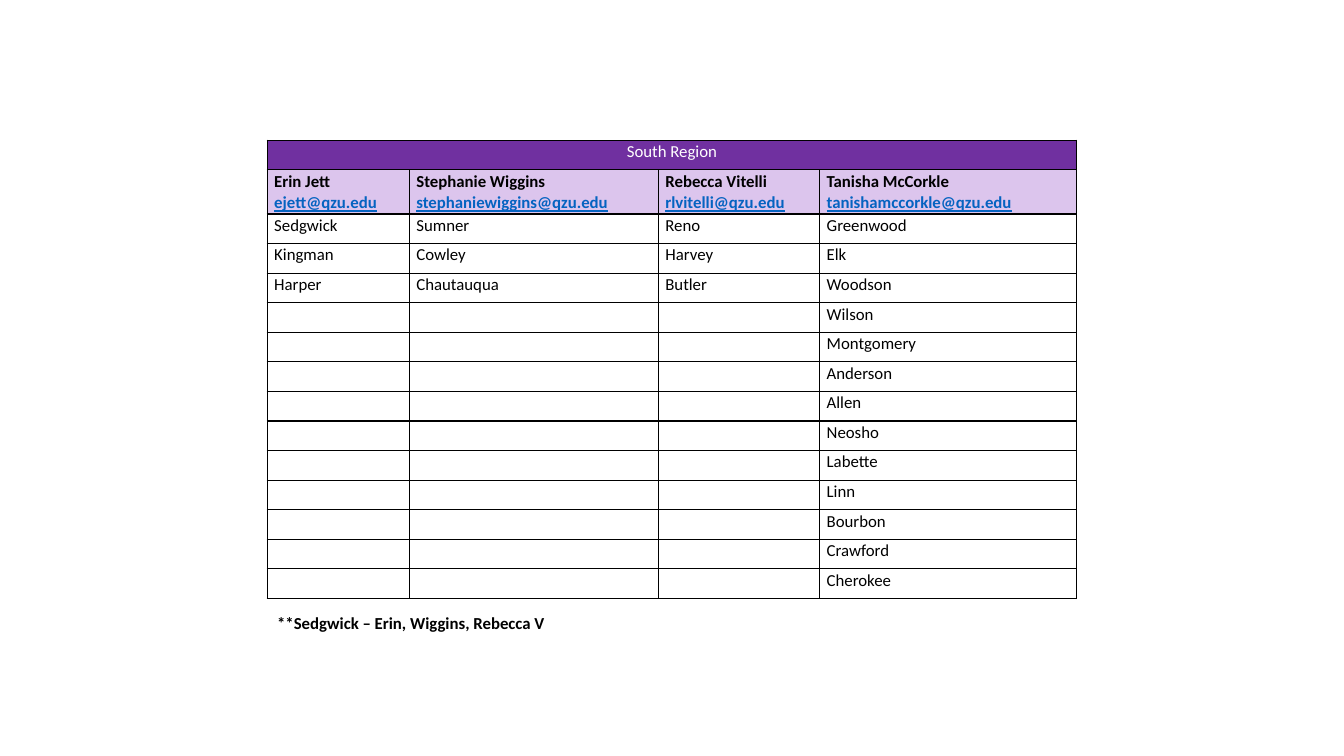
from itertools import zip_longest

from lxml import etree
from pptx import Presentation
from pptx.dml.color import RGBColor
from pptx.enum.text import MSO_ANCHOR, MSO_AUTO_SIZE, PP_ALIGN
from pptx.oxml.ns import qn
from pptx.util import Inches, Pt

CENTER, LEFT = PP_ALIGN.CENTER, PP_ALIGN.LEFT
MIDDLE = MSO_ANCHOR.MIDDLE
FIT_SHAPE = MSO_AUTO_SIZE.SHAPE_TO_FIT_TEXT

FONT, SIZE = "Calibri", 12
BLACK, WHITE, PURPLE, LILAC, LINK_BLUE = "000000", "FFFFFF", "7030A0", "DCC5ED", "0563C1"

REGION = "South Region"
AGENTS = [
    ("Erin Jett", "ejett@qzu.edu"),
    ("Stephanie Wiggins", "stephaniewiggins@qzu.edu"),
    ("Rebecca Vitelli", "rlvitelli@qzu.edu"),
    ("Tanisha McCorkle", "tanishamccorkle@qzu.edu"),
]
COUNTIES = [
    ["Sedgwick", "Kingman", "Harper"],
    ["Sumner", "Cowley", "Chautauqua"],
    ["Reno", "Harvey", "Butler"],
    ["Greenwood", "Elk", "Woodson", "Wilson", "Montgomery", "Anderson", "Allen",
     "Neosho", "Labette", "Linn", "Bourbon", "Crawford", "Cherokee"],
]
COLUMN_WIDTHS = [1.41, 2.47, 1.6, 2.55]
AGENT_ROW_HEIGHT = 0.44


def rgb(color):
    return RGBColor.from_string(color)


def add_run(paragraph, text, color=BLACK, bold=False, underline=False):
    run = paragraph.add_run()
    run.text = text
    font = run.font
    font.name, font.size = FONT, Pt(SIZE)
    font.bold, font.underline = bold, underline
    font.color.rgb = rgb(color)


def add_borders(cell):
    properties = cell._tc.get_or_add_tcPr()
    for side in ("lnL", "lnR", "lnT", "lnB"):
        line = etree.SubElement(properties, qn(f"a:{side}"), w=str(Pt(1)))
        fill = etree.SubElement(line, qn("a:solidFill"))
        etree.SubElement(fill, qn("a:srgbClr"), val=BLACK)


def format_cell(cell, fill=None):
    cell.margin_left = cell.margin_right = Inches(0.07)
    cell.margin_top = cell.margin_bottom = 0
    add_borders(cell)
    if fill:
        cell.fill.solid()
        cell.fill.fore_color.rgb = rgb(fill)
    else:
        cell.fill.background()


def fill_cell(cell, lines, align=LEFT):
    """Write one paragraph for each dict of add_run arguments."""
    frame = cell.text_frame
    for index, line in enumerate(lines):
        paragraph = frame.add_paragraph() if index else frame.paragraphs[0]
        paragraph.alignment = align
        paragraph.line_spacing = 1.07
        add_run(paragraph, **line)
    if not lines:
        # An empty cell needs the text size too, or its row grows
        etree.SubElement(frame.paragraphs[0]._p, qn("a:endParaRPr"), sz=str(SIZE * 100))


def add_region_table(slide, left, top, width, height):
    county_rows = list(zip_longest(*COUNTIES))
    row_count = len(county_rows) + 2
    table = slide.shapes.add_table(row_count, len(AGENTS), Inches(left), Inches(top),
                                   Inches(width), Inches(height)).table
    table.first_row = table.horz_banding = False
    for column, column_width in zip(table.columns, COLUMN_WIDTHS):
        column.width = Inches(column_width)
    for row in table.rows:
        row.height = Inches((height - AGENT_ROW_HEIGHT) / (row_count - 1))
    table.rows[1].height = Inches(AGENT_ROW_HEIGHT)

    row_fills = [PURPLE, LILAC] + [None] * len(county_rows)
    for row, fill in zip(table.rows, row_fills):
        for cell in row.cells:
            format_cell(cell, fill)

    heading = table.cell(0, 0)
    heading.merge(table.cell(0, len(AGENTS) - 1))
    fill_cell(heading, [dict(text=REGION, color=WHITE)], CENTER)
    for col, (agent, email) in enumerate(AGENTS):
        fill_cell(table.cell(1, col), [
            dict(text=agent, bold=True),
            dict(text=email, color=LINK_BLUE, bold=True, underline=True),
        ])
    for row_index, counties in enumerate(county_rows, start=2):
        for col, county in enumerate(counties):
            fill_cell(table.cell(row_index, col), [dict(text=county)] if county else [])


def add_footnote(slide, left, top, width, height):
    footnote = slide.shapes.add_textbox(Inches(left), Inches(top), Inches(width), Inches(height))
    frame = footnote.text_frame
    frame.word_wrap = False
    frame.auto_size = FIT_SHAPE
    frame.vertical_anchor = MIDDLE
    add_run(frame.paragraphs[0], "**Sedgwick – Erin, Wiggins, Rebecca V", bold=True)


def main():
    deck = Presentation()
    deck.slide_width, deck.slide_height = Inches(13.33), Inches(7.5)
    slide = deck.slides.add_slide(deck.slide_layouts[6])
    add_region_table(slide, 2.65, 1.39, sum(COLUMN_WIDTHS), 4.55)
    add_footnote(slide, 2.65, 6.03, 2.89, 0.3)
    deck.save("out.pptx")


if __name__ == "__main__":
    main()
